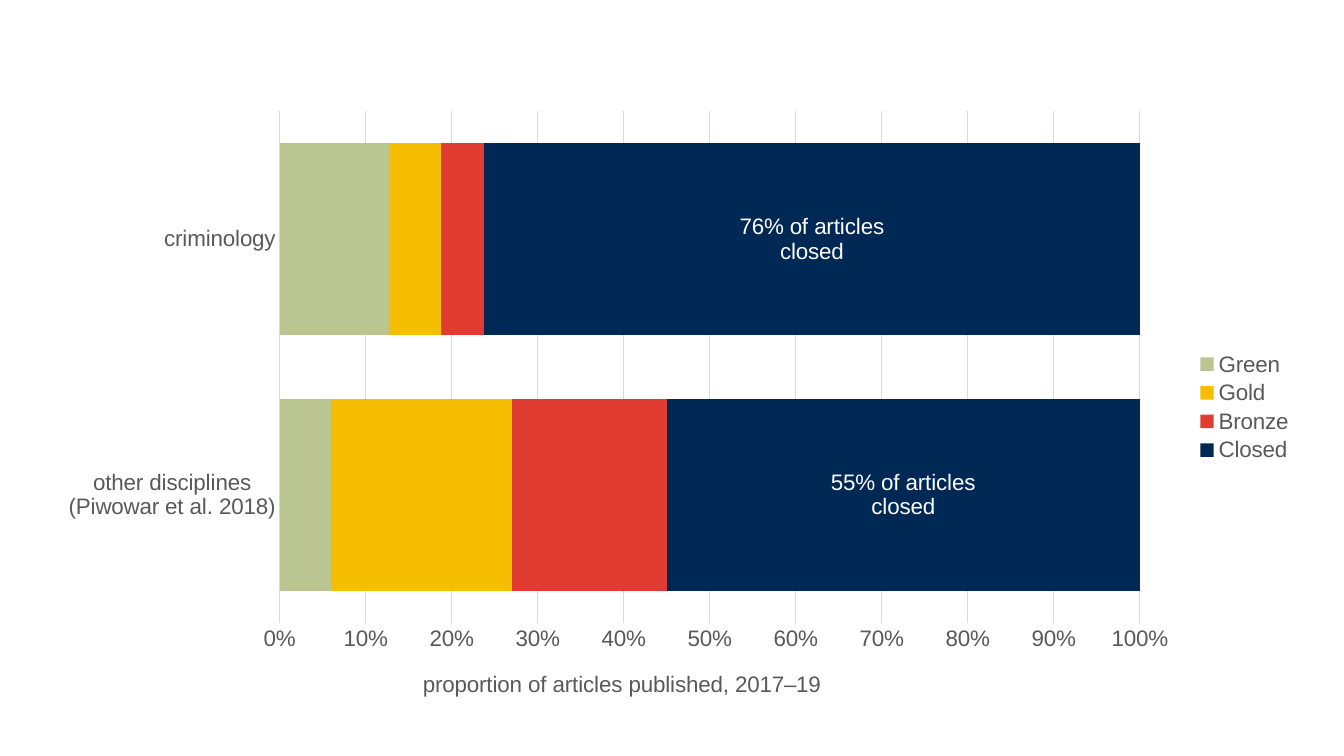
from lxml import etree
from pptx import Presentation
from pptx.chart.data import CategoryChartData
from pptx.dml.color import RGBColor
from pptx.enum import chart as kinds
from pptx.oxml import ns
from pptx.util import Cm, Pt

HUES = {
    "Green": "BBC592",
    "Gold": "F6BE00",
    "Bronze": "E03C31",
    "Closed": "002855",
    "text": "595959",
    "grid": "D9D9D9",
    "white": "FFFFFF",
}
SHARES = {
    "Green": (0.06, 0.13),
    "Gold": (0.21, 0.06),
    "Bronze": (0.18, 0.05),
    "Closed": (0.55, 0.77),
}
FIELDS = ("other disciplines\n(Piwowar et al. 2018)", "criminology")
NOTES = ("55% of articles closed", "76% of articles closed")


def hue(name):
    return RGBColor.from_string(HUES[name])


def style(font, color="text", size=16):
    font.name = "Arial"
    font.size = Pt(size)
    font.bold = False
    font.color.rgb = hue(color)


def write(frame, words, **form):
    frame.text = words
    style(frame.paragraphs[0].runs[0].font, **form)


def rule(line):
    line.color.rgb = hue("grid")
    line.width = Pt(0.75)


def place(node, index, **spots):
    for old in node.findall(ns.qn("c:layout")):
        node.remove(old)
    layout = etree.Element(ns.qn("c:layout"))
    manual = etree.SubElement(layout, ns.qn("c:manualLayout"))
    for tag, value in spots.items():
        etree.SubElement(manual, ns.qn(f"c:{tag}")).set("val", str(value))
    node.insert(index, layout)


def add_bars(slide):
    data = CategoryChartData(number_format="0%")
    data.categories = FIELDS
    for name, values in SHARES.items():
        data.add_series(name, values)
    chart = slide.shapes.add_chart(
        kinds.XL_CHART_TYPE.BAR_STACKED_100,
        Cm(0.99), Cm(2.49), Cm(31.88), Cm(15.54), data,
    ).chart
    style(chart.font)
    chart.has_title = False
    plot = chart.plots[0]
    plot.gap_width = 33
    plot.overlap = 100
    plot.vary_by_categories = False
    for series in plot.series:
        series.format.fill.solid()
        series.format.fill.fore_color.rgb = hue(series.name)
    place(chart.element.xpath(".//c:plotArea")[0], 0,
          layoutTarget="inner", xMode="edge", yMode="edge",
          x=0.19, y=0.02, w=0.68, h=0.83)
    return chart


def set_axes(chart):
    for axis in (chart.category_axis, chart.value_axis):
        axis.major_tick_mark = kinds.XL_TICK_MARK.NONE
        axis.minor_tick_mark = kinds.XL_TICK_MARK.NONE
        style(axis.tick_labels.font)
    rule(chart.category_axis.format.line)
    scale = chart.value_axis
    scale.minimum_scale, scale.maximum_scale = 0, 1
    scale.major_unit = 0.1
    scale.tick_labels.number_format = "0%"
    scale.tick_labels.number_format_is_linked = False
    scale.format.line.fill.background()
    scale.has_major_gridlines = True
    rule(scale.major_gridlines.format.line)
    title = scale.axis_title
    write(title.text_frame, "proportion of articles published, 2017–19")
    place(title.element, 1, xMode="edge", yMode="edge", x=0.3, y=0.92)


def set_legend(chart):
    chart.has_legend = True
    chart.legend.position = kinds.XL_LEGEND_POSITION.RIGHT
    chart.legend.include_in_layout = False
    style(chart.legend.font)


def add_notes(series):
    labels = series.data_labels
    labels.show_value = True
    labels.number_format = "0%"
    labels.number_format_is_linked = False
    style(labels.font, color="white")
    for index, words in enumerate(NOTES):
        label = series.points[index].data_label
        write(label.text_frame, words, color="white")
        label.position = kinds.XL_LABEL_POSITION.CENTER


def main():
    deck = Presentation()
    deck.slide_width, deck.slide_height = Cm(33.87), Cm(19.05)
    slide = deck.slides.add_slide(deck.slide_layouts[6])
    chart = add_bars(slide)
    set_axes(chart)
    set_legend(chart)
    add_notes(chart.plots[0].series[-1])
    deck.save("out.pptx")


if __name__ == "__main__":
    main()
